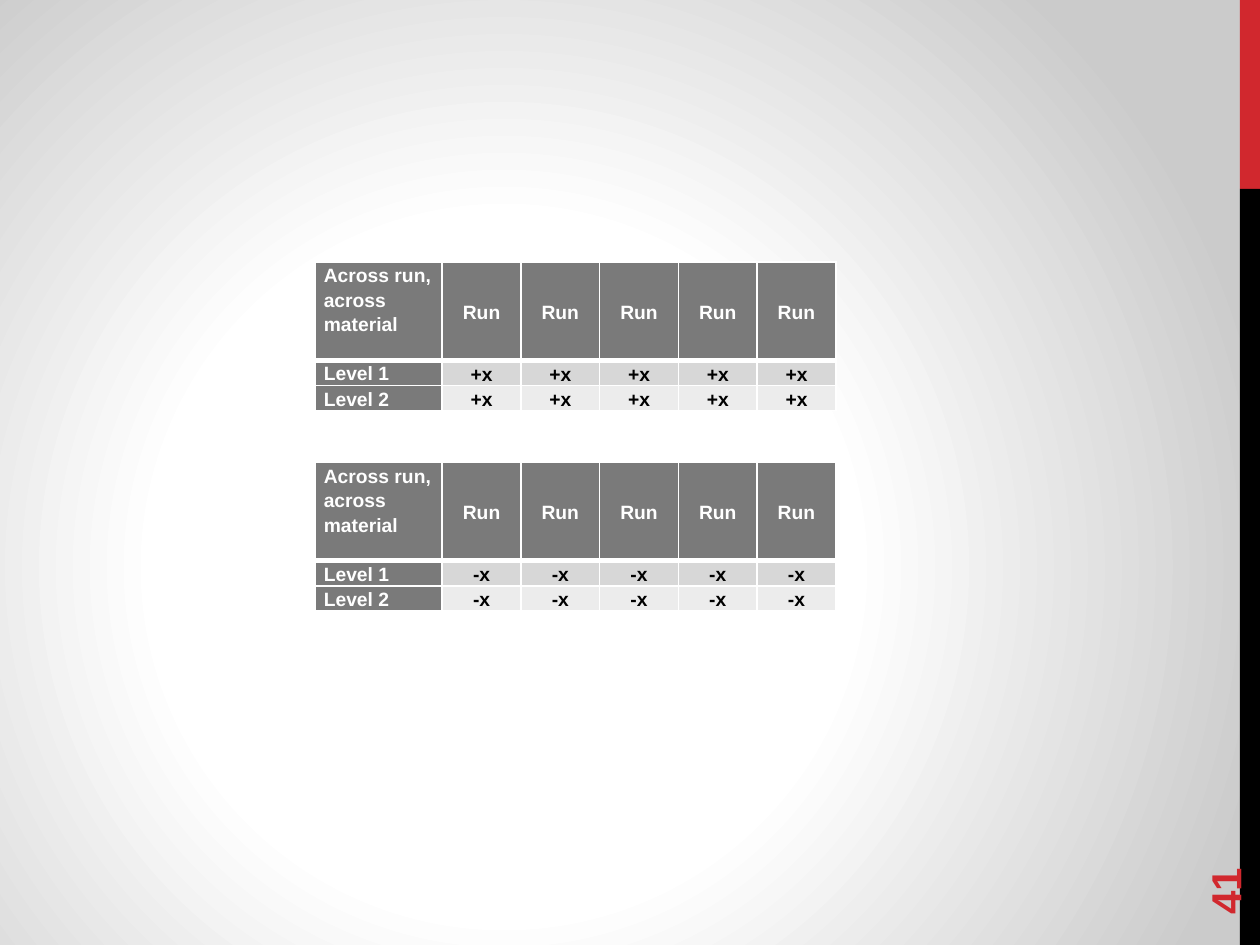
"""Build a slide with two run-by-level tables on a radial background."""
from dataclasses import dataclass

from pptx import Presentation
from pptx.dml.color import RGBColor
from pptx.enum.shapes import MSO_SHAPE as Shape
from pptx.enum.text import MSO_ANCHOR as Anchor, PP_ALIGN as Align
from pptx.oxml import parse_xml
from pptx.util import Inches, Pt

NAMESPACE = 'xmlns:a="http://schemas.openxmlformats.org/drawingml/2006/main"'


@dataclass(frozen=True)
class Theme:
    """Colours, font and type sizes."""
    font: str = "Arial"
    table_size: int = 11
    number_size: int = 24
    white: str = "FFFFFF"
    black: str = "000000"
    red: str = "D1282E"
    header: str = "7A7A7A"
    bands: tuple = ("D7D7D7", "ECECEC")
    stops: tuple = ((0, "FFFFFF"), (44, "FFFFFF"), (100, "CBCBCB"))


class SlideBuilder:
    """Draw elements on one slide, placed on a grid of 100 columns by 75 rows."""

    def __init__(self, presentation, theme):
        """Add a blank slide and keep its style and grid steps."""
        self.theme = theme
        self.slide = presentation.slides.add_slide(presentation.slide_layouts[6])
        self.column = presentation.slide_width / 100
        self.row = presentation.slide_height / 75

    def box(self, left, top, width, height):
        """Turn grid units into slide lengths."""
        return (round(left * self.column), round(top * self.row),
                round(width * self.column), round(height * self.row))

    def background(self):
        """Fill the background with a circular gradient."""
        stops = "".join(
            f'<a:gs pos="{share * 1000}"><a:srgbClr val="{color}"/></a:gs>'
            for share, color in self.theme.stops)
        self.slide.background.fill.solid()
        properties = self.slide.element.xpath(".//p:bgPr")[0]
        properties.replace(properties[0], parse_xml(
            f'<a:gradFill {NAMESPACE} rotWithShape="1"><a:gsLst>{stops}</a:gsLst>'
            '<a:path path="circle"><a:fillToRect l="40000" t="60000" r="60000" b="40000"/>'
            '</a:path></a:gradFill>'))

    def bar(self, place, color):
        """Draw a plain filled rectangle."""
        shape = self.slide.shapes.add_shape(Shape.RECTANGLE, *self.box(*place))
        shape.shadow.inherit = False
        shape.fill.solid()
        shape.fill.fore_color.rgb = RGBColor.from_string(color)
        shape.line.fill.background()

    def label(self, paragraph, text, size, color, align):
        """Put bold text into a paragraph."""
        paragraph.text = text
        paragraph.alignment = align
        font = paragraph.font
        font.name, font.size, font.bold = self.theme.font, Pt(size), True
        font.color.rgb = RGBColor.from_string(color)

    def page_number(self, place, text):
        """Add the page number running upwards."""
        shape = self.slide.shapes.add_textbox(*self.box(*place))
        shape.rotation = 270
        frame = shape.text_frame
        frame.word_wrap = True
        frame.vertical_anchor = Anchor.MIDDLE
        self.label(frame.paragraphs[0], text, self.theme.number_size, self.theme.red, Align.LEFT)

    def borders(self, cell, **widths):
        """Set white cell borders, with widths in points by side."""
        properties = cell._tc.get_or_add_tcPr()
        for index, side in enumerate("LRTB"):
            properties.insert(index, parse_xml(
                f'<a:ln{side} {NAMESPACE} w="{Pt(widths.get(side, 1))}"><a:solidFill>'
                f'<a:srgbClr val="{self.theme.white}"/></a:solidFill></a:ln{side}>'))

    def cell(self, cell, text, row, column):
        """Style one cell by its place in the table."""
        theme = self.theme
        heading = row == 0 or column == 0
        cell.margin_left = cell.margin_right = Inches(0.07)
        cell.margin_top = cell.margin_bottom = 0
        cell.vertical_anchor = Anchor.MIDDLE if column else Anchor.TOP
        cell.fill.solid()
        cell.fill.fore_color.rgb = RGBColor.from_string(
            theme.header if heading else theme.bands[row - 1])
        paragraph = cell.text_frame.paragraphs[0]
        paragraph.line_spacing = 1.15
        self.label(paragraph, text, theme.table_size, theme.white if heading else theme.black,
                   Align.CENTER if column else Align.LEFT)
        self.borders(cell, T=3 if row == 1 else 1, B=1 if row else 3)

    def table(self, left, top, values, widths, heights):
        """Add a table whose column widths and row heights are grid units."""
        place = self.box(left, top, sum(widths), sum(heights))
        table = self.slide.shapes.add_table(len(heights), len(widths), *place).table
        for column, width in zip(table.columns, widths):
            column.width = round(width * self.column)
        for row, height in zip(table.rows, heights):
            row.height = round(height * self.row)
        for row, texts in enumerate(values):
            for column, text in enumerate(texts):
                self.cell(table.cell(row, column), text, row, column)


def main():
    """Build and save the presentation."""
    presentation = Presentation()
    presentation.slide_width, presentation.slide_height = Inches(10), Inches(7.5)
    theme = Theme()
    builder = SlideBuilder(presentation, theme)
    builder.background()
    builder.bar((98.4, 0, 1.6, 15), theme.red)
    builder.bar((98.4, 15, 1.6, 60), theme.black)
    runs = 5
    for top, change in ((20.8, "+x"), (36.7, "-x")):
        values = [["Across run, across material"] + ["Run"] * runs]
        values += [[level] + [change] * runs for level in ("Level 1", "Level 2")]
        builder.table(25, top, values, [10.1] + [6.25] * runs, [7.8, 2, 2])
    builder.page_number((90, 64.4, 14.4, 4), "41")
    presentation.save("out.pptx")


if __name__ == "__main__":
    main()
